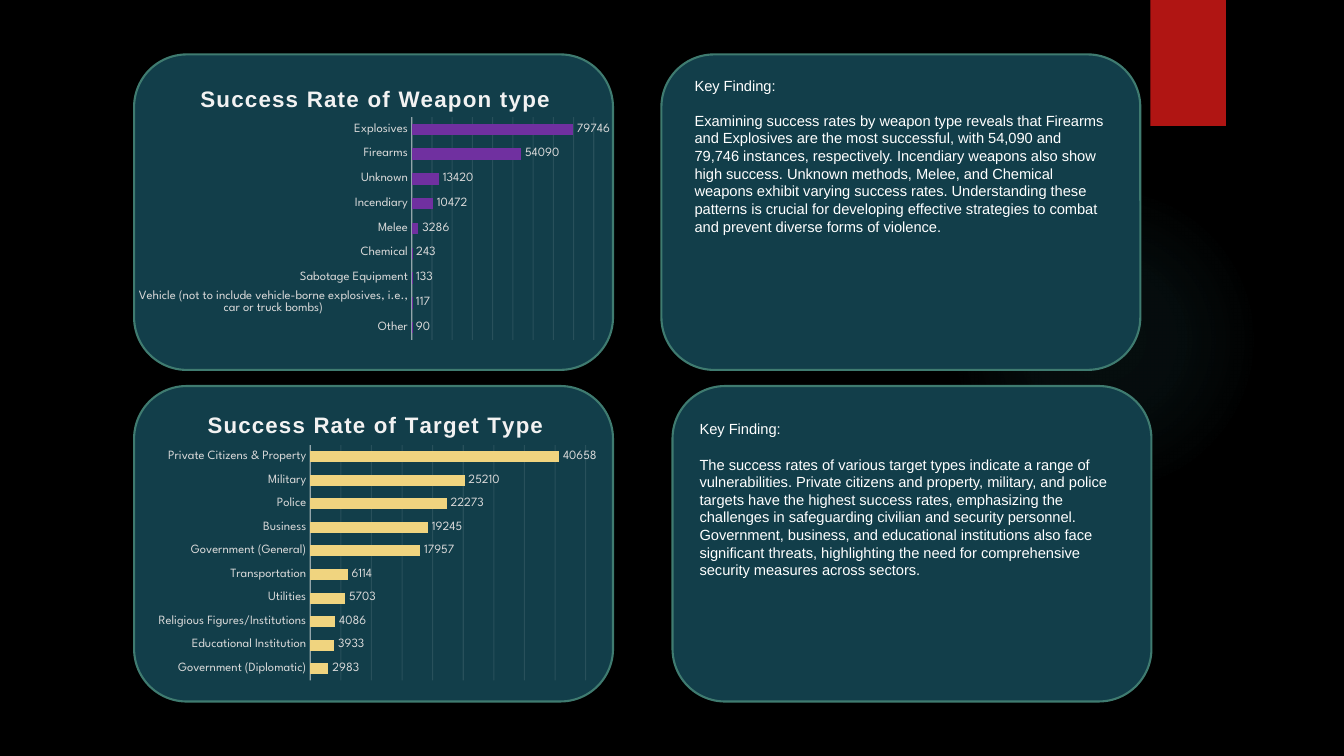
from lxml import etree
from pptx import Presentation
from pptx.chart.data import CategoryChartData
from pptx.dml.color import RGBColor
from pptx.enum import chart as charts, shapes
from pptx.oxml import parse_xml
from pptx.oxml.ns import nsdecls, qn
from pptx.util import Inches, Pt

WEAPONS = {
    "Other": 90,
    "Vehicle (not to include vehicle-borne explosives, i.e., car or truck bombs)": 117,
    "Sabotage Equipment": 133,
    "Chemical": 243,
    "Melee": 3286,
    "Incendiary": 10472,
    "Unknown": 13420,
    "Firearms": 54090,
    "Explosives": 79746,
}
TARGETS = {
    "Government (Diplomatic)": 2983,
    "Educational Institution": 3933,
    "Religious Figures/Institutions": 4086,
    "Utilities": 5703,
    "Transportation": 6114,
    "Government (General)": 17957,
    "Business": 19245,
    "Police": 22273,
    "Military": 25210,
    "Private Citizens & Property": 40658,
}
WEAPON_FINDING = (
    "Examining success rates by weapon type reveals that Firearms and Explosives are the most "
    "successful, with 54,090 and 79,746 instances, respectively. Incendiary weapons also show "
    "high success. Unknown methods, Melee, and Chemical weapons exhibit varying success rates. "
    "Understanding these patterns is crucial for developing effective strategies to combat and "
    "prevent diverse forms of violence."
)
TARGET_FINDING = (
    "The success rates of various target types indicate a range of vulnerabilities. Private "
    "citizens and property, military, and police targets have the highest success rates, "
    "emphasizing the challenges in safeguarding civilian and security personnel. Government, "
    "business, and educational institutions also face significant threats, highlighting the "
    "need for comprehensive security measures across sectors."
)


def paint(target, color):
    """Give a fill, or the fill of a line, one solid colour."""
    target.solid()
    target.fore_color.rgb = RGBColor.from_string(color)


def set_font(font, size, color, name):
    font.size, font.name = Pt(size), name
    font.color.rgb = RGBColor.from_string(color)


def add_plain_shape(page, kind, place, color, outline=None):
    shape = page.shapes.add_shape(kind, *map(Inches, place))
    shape.shadow.inherit = False
    paint(shape.fill, color)
    if outline:
        paint(shape.line.fill, outline)
        shape.line.width = Pt(1.5)
    else:
        shape.line.fill.background()
    return shape


def add_glow(page, place, color):
    """Add a circle that fades out from its centre."""
    glow = add_plain_shape(page, shapes.MSO_SHAPE.OVAL, place, color)
    stops = "".join(
        f'<a:gs pos="{spot}000"><a:srgbClr val="{color}"><a:alpha val="{alpha}000"/></a:srgbClr></a:gs>'
        for spot, alpha in ((0, 7), (36, 6), (69, 0), (100, 0))
    )
    properties = glow.element.spPr
    properties.replace(properties.find(qn("a:solidFill")), parse_xml(
        f'<a:gradFill {nsdecls("a")}><a:gsLst>{stops}</a:gsLst><a:path path="circle">'
        '<a:fillToRect l="50000" t="50000" r="50000" b="50000"/></a:path></a:gradFill>'))


def add_finding(page, left, top, finding):
    box = page.shapes.add_textbox(*map(Inches, (left, top, 4.28, 1.69)))
    frame = box.text_frame
    frame.word_wrap = True
    frame.text = f"Key Finding:\n{finding}"
    for para in frame.paragraphs:
        set_font(para.font, 10.5, "FFFFFF", "Arial")
    frame.paragraphs[1].space_before = Pt(12.5)


def set_layout(parent, position, **values):
    """Place a chart part by fractions of the chart's size."""
    old = parent.find(qn("c:layout"))
    if old is not None:
        parent.remove(old)
    layout = etree.Element(qn("c:layout"))
    manual = etree.SubElement(layout, qn("c:manualLayout"))
    for tag, value in values.items():
        etree.SubElement(manual, qn(f"c:{tag}")).set("val", str(value))
    parent.insert(position, layout)


def add_line_alpha(line, percent):
    color = line._get_or_add_ln().find(".//" + qn("a:srgbClr"))
    etree.SubElement(color, qn("a:alpha")).set("val", str(percent * 1000))


def style_line(line, width, percent):
    paint(line.fill, "F2F2F2")
    line.width = Pt(width)
    add_line_alpha(line, percent)


def add_title(chart, title, x, y):
    chart.has_title = True
    frame = chart.chart_title.text_frame
    frame.text = title
    font = frame.paragraphs[0].font
    set_font(font, 16, "F2F2F2", "Arial")
    font.bold = True
    frame.paragraphs[0].runs[0].font._element.set("spc", "100")
    chart.chart_title.include_in_layout = False
    set_layout(chart.chart_title._element, 1, xMode="edge", yMode="edge", x=x, y=y)


def add_bars(page, place, title, title_spot, counts, color, step, plot_area):
    data = CategoryChartData()
    data.categories = list(counts)
    data.add_series("Series 1", list(counts.values()))
    kind = charts.XL_CHART_TYPE.BAR_CLUSTERED
    chart = page.shapes.add_chart(kind, *map(Inches, place), data).chart
    chart.has_legend = False
    set_font(chart.font, 10, "FFFFFF", "League Spartan")
    add_title(chart, title, *title_spot)

    names, scale = chart.category_axis, chart.value_axis
    names.major_tick_mark = charts.XL_TICK_MARK.NONE
    set_font(names.tick_labels.font, 9, "D9D9D9", "League Spartan")
    style_line(names.format.line, 1, 54)
    scale.minimum_scale, scale.maximum_scale, scale.major_unit = 0, 9 * step, step
    scale.visible = False
    style_line(scale.major_gridlines.format.line, 0.75, 10)

    plot = chart.plots[0]
    plot.gap_width, plot.overlap, plot.vary_by_categories = 115, -20, False
    paint(plot.series[0].format.fill, color)
    plot.has_data_labels = True
    labels = plot.data_labels
    labels.show_value = True
    labels.position = charts.XL_LABEL_POSITION.OUTSIDE_END
    set_font(labels.font, 9, "D9D9D9", "League Spartan")
    x, y, w, h = plot_area
    set_layout(chart._chartSpace.chart.plotArea, 0, layoutTarget="inner",
               xMode="edge", yMode="edge", x=x, y=y, w=w, h=h)


def main():
    deck = Presentation()
    deck.slide_width, deck.slide_height = Inches(13.33), Inches(7.5)
    page = deck.slides.add_slide(deck.slide_layouts[6])
    paint(page.background.fill, "000000")

    add_glow(page, (9.41, 1.83, 3.08, 3.08), "50B9C1")
    add_plain_shape(page, shapes.MSO_SHAPE.RECTANGLE, (11.41, 0, 0.75, 1.25), "B01513")
    for left, top in ((1.33, 0.54), (6.56, 0.54), (1.33, 3.83), (6.67, 3.83)):
        add_plain_shape(page, shapes.MSO_SHAPE.ROUNDED_RECTANGLE,
                        (left, top, 4.75, 3.13), "123E4A", "3F7B70")

    add_finding(page, 6.79, 0.71, WEAPON_FINDING)
    add_finding(page, 6.84, 4.12, TARGET_FINDING)
    add_bars(page, (1.33, 0.63, 4.75, 2.8), "Success Rate of Weapon type", (0.13, 0.06),
             WEAPONS, "7030A0", 10000, (0.58, 0.19, 0.38, 0.79))
    add_bars(page, (1.49, 3.89, 4.43, 2.92), "Success Rate of Target Type", (0.12, 0.05),
             TARGETS, "F0D47F", 5000, (0.36, 0.18, 0.62, 0.8))
    deck.save("out.pptx")


if __name__ == "__main__":
    main()
